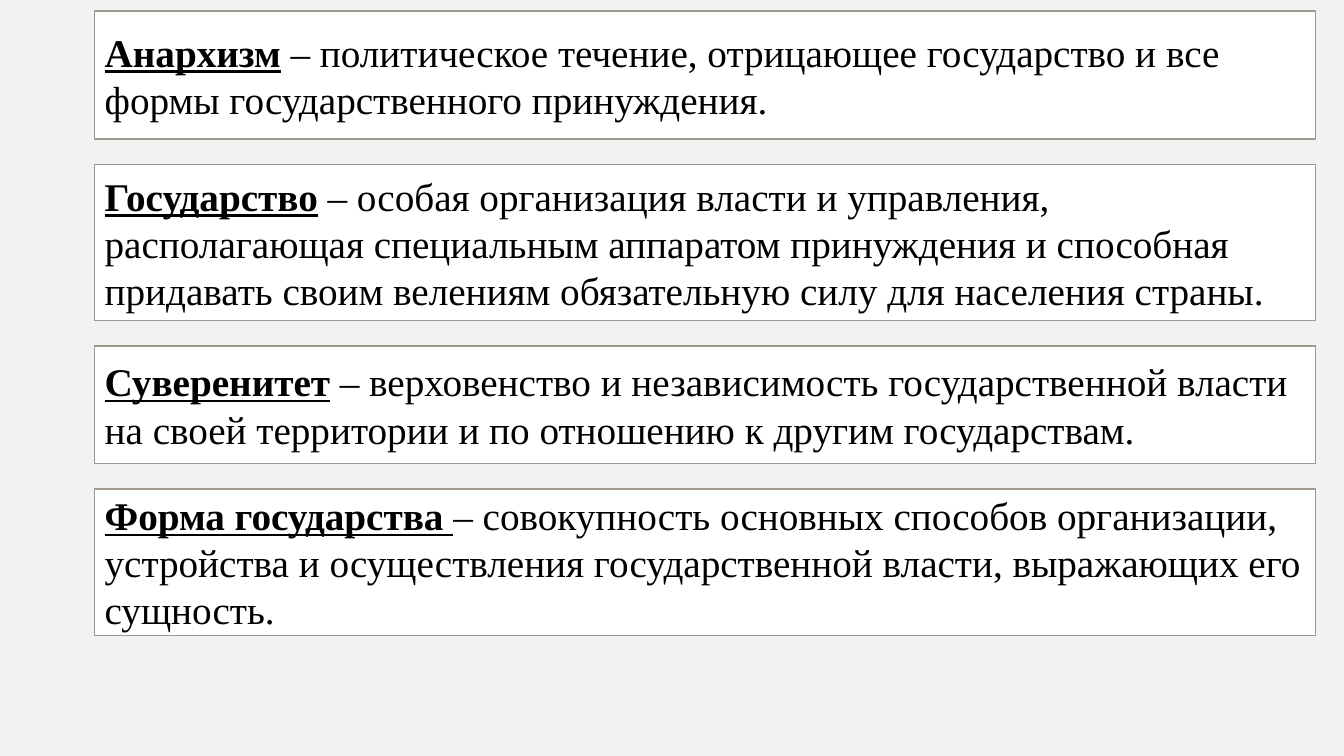
from pptx import Presentation
from pptx.dml.color import RGBColor
from pptx.enum.shapes import MSO_SHAPE
from pptx.enum.text import MSO_ANCHOR, PP_ALIGN
from pptx.util import Pt

BOX_LEFT, BOX_WIDTH = 67.7, 872
FIRST_TOP, GAP = 7.9, 18.1
DEFINITIONS = [
    (91.4, "Анархизм",
     " – политическое течение, отрицающее государство и все формы "
     "государственного принуждения."),
    (111.6, "Государство",
     " – особая организация власти и управления, располагающая специальным "
     "аппаратом принуждения и способная придавать своим велениям "
     "обязательную силу для населения страны."),
    (84.2, "Суверенитет",
     " – верховенство и независимость государственной власти на своей "
     "территории и по отношению к другим государствам."),
    (104.4, "Форма государства ",
     "– совокупность основных способов организации, устройства и "
     "осуществления государственной власти, выражающих его сущность."),
]


def set_solid(fill, color):
    fill.solid()
    fill.fore_color.rgb = RGBColor.from_string(color)


def add_definition(slide, top, height, term, meaning):
    shape = slide.shapes.add_shape(
        MSO_SHAPE.RECTANGLE, Pt(BOX_LEFT), Pt(top), Pt(BOX_WIDTH), Pt(height))
    shape.shadow.inherit = False
    set_solid(shape.fill, "FFFFFF")
    set_solid(shape.line.fill, "A0988C")
    shape.line.width = Pt(1)

    frame = shape.text_frame
    frame.word_wrap = True
    frame.vertical_anchor = MSO_ANCHOR.MIDDLE
    paragraph = frame.paragraphs[0]
    paragraph.alignment = PP_ALIGN.LEFT
    paragraph.font.name = "Times New Roman"
    paragraph.font.size = Pt(28)
    set_solid(paragraph.font.fill, "000000")
    for text, is_term in ((term, True), (meaning, False)):
        run = paragraph.add_run()
        run.text = text
        set_solid(run.font.fill, "000000")
        if is_term:
            run.font.bold = True
            run.font.underline = True


def main():
    presentation = Presentation()
    presentation.slide_width, presentation.slide_height = Pt(960), Pt(540)
    slide = presentation.slides.add_slide(presentation.slide_layouts[6])
    set_solid(slide.background.fill, "F2F2F2")

    top = FIRST_TOP
    for height, term, meaning in DEFINITIONS:
        add_definition(slide, top, height, term, meaning)
        top += height + GAP

    presentation.save("out.pptx")


if __name__ == "__main__":
    main()
